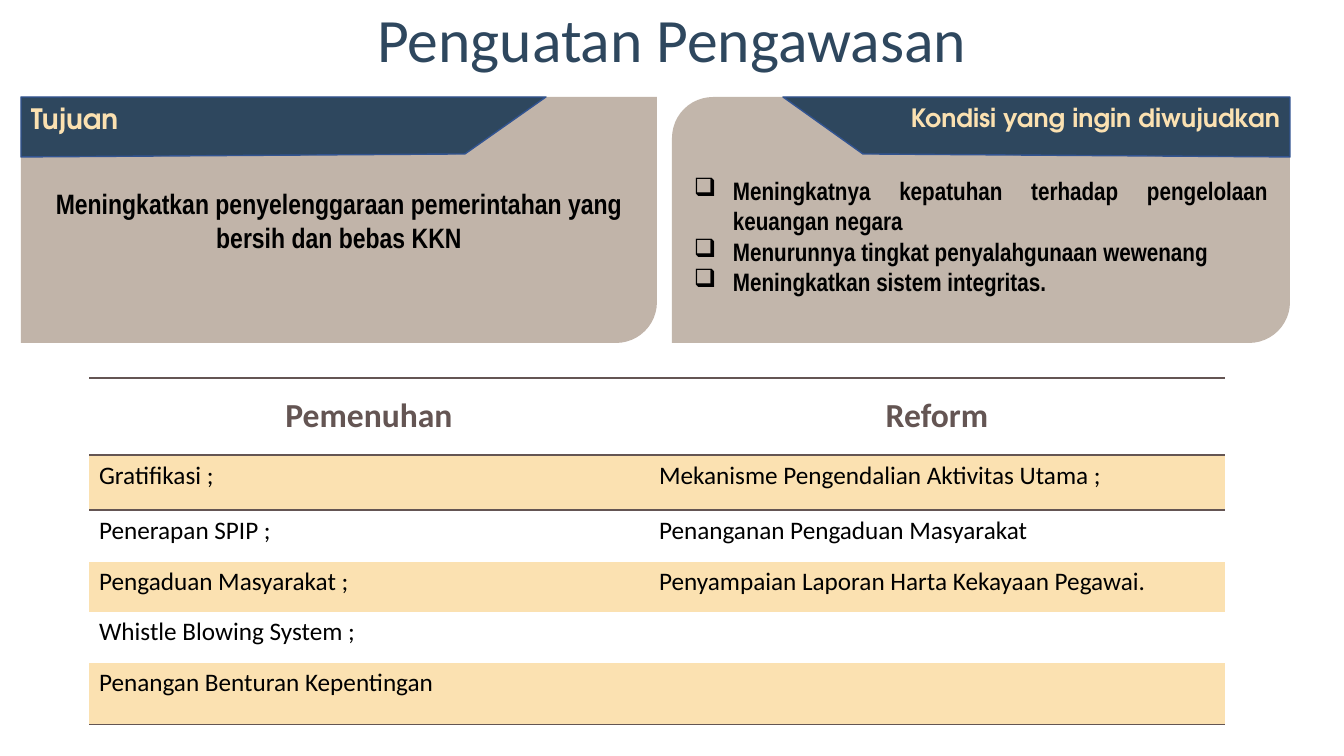
import pptx
import pptx.dml.color
import pptx.enum.shapes
import pptx.enum.text
import pptx.oxml
import pptx.oxml.ns
import pptx.util

PX = 914400 / 100.8
ALIGN = pptx.enum.text.PP_ALIGN
ANCHOR = pptx.enum.text.MSO_ANCHOR
NAVY, CREAM, TAUPE, BROWN, BLACK = "2E475E", "FBE1B1", "89705C", "645553", "000000"
OUTLINE = "325491"
NAMESPACE = 'xmlns:a="http://schemas.openxmlformats.org/drawingml/2006/main"'


def px(*lengths):
    """Turn px into EMU."""
    return [pptx.util.Emu(round(length * PX)) for length in lengths]


def color(hex_string):
    return pptx.dml.color.RGBColor.from_string(hex_string)


def xml(tag_text):
    return pptx.oxml.parse_xml(tag_text.replace(" ", f" {NAMESPACE} ", 1))


def write_text(frame, lines, size, font, fill, bold=False, align=ALIGN.LEFT, bullet=None):
    for index, line in enumerate(lines):
        paragraph = frame.add_paragraph() if index else frame.paragraphs[0]
        paragraph.alignment = align
        if bullet:
            properties = paragraph._p.get_or_add_pPr()
            indent = px(39)[0]
            properties.set("marL", str(indent))
            properties.set("indent", str(-indent))
            properties.append(xml(f'<a:buChar char="{bullet}"/>'))
        run = paragraph.add_run()
        run.text = line
        run.font.size = pptx.util.Pt(size)
        run.font.name = font
        run.font.bold = bold
        run.font.color.rgb = color(fill)


def add_title(slide, box, text):
    shape = slide.shapes.add_textbox(*px(*box))
    shape.text_frame.word_wrap = False
    write_text(shape.text_frame, [text], 44, "Calibri", NAVY, align=ALIGN.CENTER)


def add_panel(slide, box, lines, opacity, top_inset=5, **text_format):
    shape = slide.shapes.add_shape(
        pptx.enum.shapes.MSO_SHAPE.ROUND_2_DIAG_RECTANGLE, *px(*box))
    shape.shadow.inherit = False
    shape.fill.solid()
    shape.fill.fore_color.rgb = color(TAUPE)
    solid = shape._element.spPr.find(pptx.oxml.ns.qn("a:solidFill"))
    solid[0].append(xml(f'<a:alpha val="{opacity * 1000}"/>'))
    shape.line.fill.background()
    frame = shape.text_frame
    frame.word_wrap = True
    frame.vertical_anchor = ANCHOR.MIDDLE
    frame.margin_top = px(top_inset)[0]
    write_text(frame, lines, font="Arial Narrow", fill=BLACK, bold=True, **text_format)


def add_banner(slide, box, text, size, slant, mirrored=False):
    """Heading with one slanted end, on the right unless mirrored."""
    left, top, width, height = box
    outline = [(0, 0), (width, 0), (width - slant, height - 3), (0, height)]
    points = [(left + (width - x if mirrored else x), top + y) for x, y in outline]
    builder = slide.shapes.build_freeform(*points[0], scale=PX)
    builder.add_line_segments(points[1:], close=True)
    shape = builder.convert_to_shape()
    shape.shadow.inherit = False
    shape.fill.solid()
    shape.fill.fore_color.rgb = color(NAVY)
    shape.line.color.rgb = color(OUTLINE)
    shape.line.width = pptx.util.Pt(1)
    shape.text_frame.word_wrap = True
    shape.text_frame.vertical_anchor = ANCHOR.TOP
    write_text(shape.text_frame, [text], size, "TeX Gyre Adventor", CREAM, bold=True,
               align=ALIGN.RIGHT if mirrored else ALIGN.LEFT)


def set_borders(cell, ruled_sides):
    properties = cell._tc.get_or_add_tcPr()
    for index, side in enumerate("LRTB"):
        if side in ruled_sides:
            line = (f'<a:ln{side} w="12700"><a:solidFill><a:srgbClr val="{BROWN}"/>'
                    f'</a:solidFill></a:ln{side}>')
        else:
            line = f'<a:ln{side} w="0"><a:noFill/></a:ln{side}>'
        properties.insert(index, xml(line))


def add_program_table(slide, box, column_widths, row_heights, rows):
    table = slide.shapes.add_table(len(rows), len(column_widths), *px(*box)).table
    table.first_row = table.horz_banding = False
    for column, width in zip(table.columns, px(*column_widths)):
        column.width = width
    for row, height in zip(table.rows, px(*row_heights)):
        row.height = height
    ruled_edges = {0, 1, 2, len(rows)}
    for row_index, texts in enumerate(rows):
        sides = ("T" if row_index in ruled_edges else "") + (
            "B" if row_index + 1 in ruled_edges else "")
        for column_index, text in enumerate(texts):
            cell = table.cell(row_index, column_index)
            if row_index % 2:
                cell.fill.solid()
                cell.fill.fore_color.rgb = color(CREAM)
            else:
                cell.fill.background()
            set_borders(cell, sides)
            if row_index == 0:
                cell.vertical_anchor = ANCHOR.MIDDLE
                write_text(cell.text_frame, [text], 24, "Calibri", BROWN, bold=True,
                           align=ALIGN.CENTER)
            elif text:
                write_text(cell.text_frame, [text], 18, "Calibri", BLACK)


def main():
    presentation = pptx.Presentation()
    presentation.slide_width, presentation.slide_height = px(1344, 756)
    slide = presentation.slides.add_slide(presentation.slide_layouts[6])

    # Goal and target panels
    add_panel(slide, (21, 97, 636, 246),
              ["Meningkatkan penyelenggaraan pemerintahan yang bersih dan bebas KKN"],
              52, size=20, align=ALIGN.CENTER)
    add_panel(slide, (672, 97, 618, 246),
              ["Meningkatnya kepatuhan terhadap pengelolaan keuangan negara",
               "Menurunnya tingkat penyalahgunaan wewenang",
               "Meningkatkan sistem integritas."],
              51, top_inset=37, size=18, align=ALIGN.JUSTIFY, bullet="❑")

    # Panel headings
    add_banner(slide, (21, 97, 525, 60), "Tujuan", 20, 81)
    add_banner(slide, (783, 97, 507, 60), "Kondisi yang ingin diwujudkan", 18, 80,
               mirrored=True)

    add_title(slide, (364, -4, 616, 85), "Penguatan Pengawasan")

    # Fulfilment and reform table
    add_program_table(slide, (89, 378, 1136, 347), (560, 576), (77, 55, 52, 50, 51, 62), [
        ("Pemenuhan", "Reform"),
        ("Gratifikasi ;", "Mekanisme Pengendalian Aktivitas Utama ;"),
        ("Penerapan SPIP ;", "Penanganan Pengaduan Masyarakat"),
        ("Pengaduan Masyarakat ;", "Penyampaian Laporan Harta Kekayaan Pegawai."),
        ("Whistle Blowing System ;", ""),
        ("Penangan Benturan Kepentingan", ""),
    ])
    presentation.save("out.pptx")


if __name__ == "__main__":
    main()
